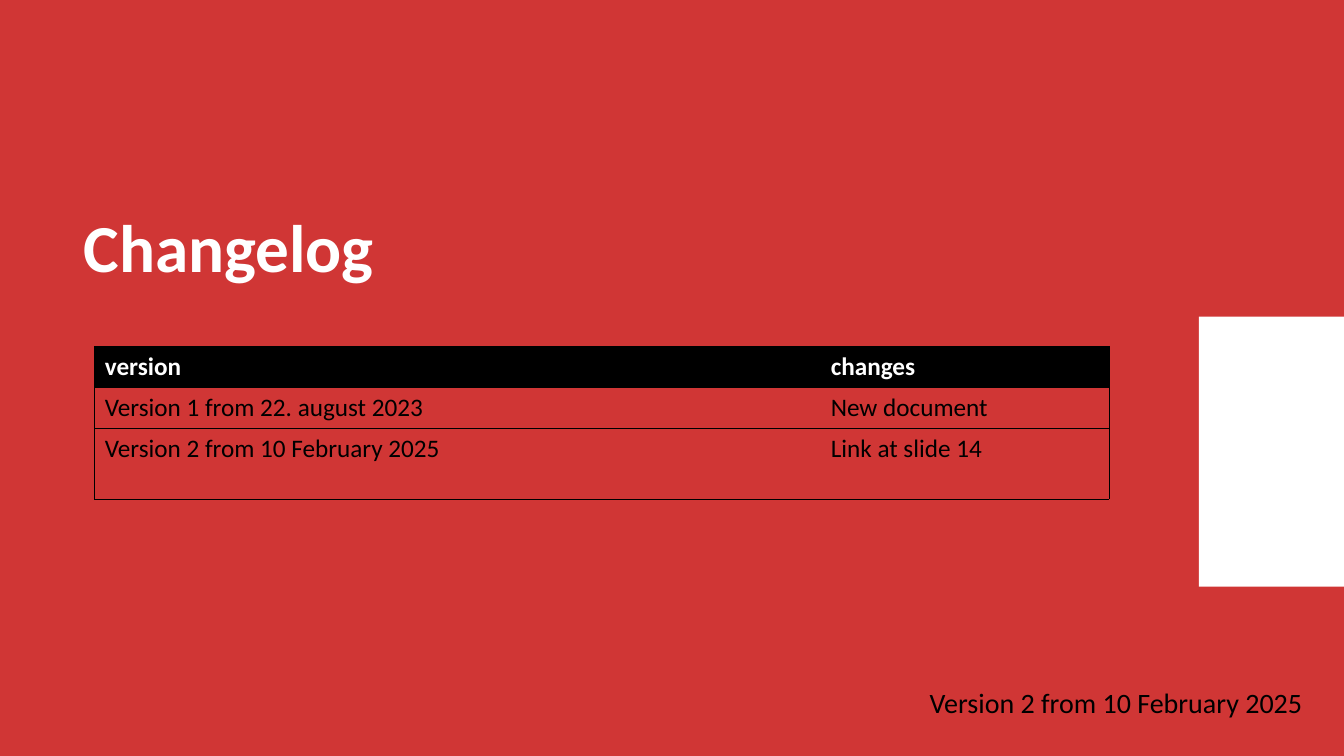
import dataclasses

import pptx
import pptx.dml.color
import pptx.enum.shapes
import pptx.enum.text
import pptx.oxml.ns
import pptx.util
from lxml import etree

Inches = pptx.util.Inches
RED, WHITE, BLACK = "D03635", "FFFFFF", "000000"


@dataclasses.dataclass
class Entry:
    version: str
    change: str
    height: float
    head: bool = False


LOG = [
    Entry("version", "changes", 0.4, head=True),
    Entry("Version 1 from 22. august 2023", "New document", 0.41),
    Entry("Version 2 from 10 February 2025", "Link at slide 14", 0.7),
]
WIDTHS = (7.2, 2.86)


def paint(fill, color: str) -> None:
    fill.solid()
    fill.fore_color.rgb = pptx.dml.color.RGBColor.from_string(color)


def style(frame, size: int, color: str, bold: bool = False) -> None:
    for run in frame.paragraphs[0].runs:
        run.font.name = "Calibri"
        run.font.size = pptx.util.Pt(size)
        run.font.bold = bold
        paint(run.font.fill, color)


def trim(frame) -> None:
    frame.margin_left = frame.margin_right = 0
    frame.margin_top = frame.margin_bottom = 0


def edge(cell, side: str, shown: bool) -> None:
    props = cell._tc.get_or_add_tcPr()
    qn = pptx.oxml.ns.qn
    line = etree.SubElement(props, qn(f"a:ln{side}"), w="6350")
    if shown:
        fill = etree.SubElement(line, qn("a:solidFill"))
        etree.SubElement(fill, qn("a:srgbClr"), val=BLACK)
    else:
        etree.SubElement(line, qn("a:noFill"))


def fill_row(table, index: int, entry: Entry) -> None:
    table.rows[index].height = Inches(entry.height)
    for col, text in enumerate((entry.version, entry.change)):
        cell = table.cell(index, col)
        cell.text_frame.text = text
        style(cell.text_frame, 18, WHITE if entry.head else BLACK, entry.head)
        # Only the inner vertical edge stays open
        for side in "LRTB":
            edge(cell, side, (side, col) not in (("R", 0), ("L", 1)))
        if entry.head:
            paint(cell.fill, BLACK)
        else:
            cell.fill.background()


def main() -> None:
    deck = pptx.Presentation()
    deck.slide_width, deck.slide_height = Inches(13.33), Inches(7.5)
    slide = deck.slides.add_slide(deck.slide_layouts[5])
    shapes = slide.shapes

    # Background and plain block at the right edge
    paint(slide.background.fill, RED)
    block = shapes.add_shape(
        pptx.enum.shapes.MSO_SHAPE.RECTANGLE,
        Inches(11.89), Inches(3.14), Inches(1.44), Inches(2.68))
    block.shadow.inherit = False
    paint(block.fill, WHITE)
    block.line.fill.background()

    # Title
    title = shapes.title
    title.left, title.top = Inches(0.83), Inches(0.68)
    title.width, title.height = Inches(7.9), Inches(2.16)
    frame = title.text_frame
    frame.text = "Changelog"
    trim(frame)
    frame.vertical_anchor = pptx.enum.text.MSO_ANCHOR.BOTTOM
    frame.paragraphs[0].alignment = pptx.enum.text.PP_ALIGN.LEFT
    frame.paragraphs[0].line_spacing = 0.88
    style(frame, 48, WHITE, True)

    # Version note
    note = shapes.add_textbox(
        Inches(9.22), Inches(6.8), Inches(3.72), Inches(0.34)).text_frame
    note.text = LOG[-1].version
    trim(note)
    note.word_wrap = False
    note.auto_size = pptx.enum.text.MSO_AUTO_SIZE.SHAPE_TO_FIT_TEXT
    style(note, 20, BLACK)

    # Change table
    table = shapes.add_table(
        len(LOG), len(WIDTHS), Inches(0.94), Inches(3.44),
        Inches(sum(WIDTHS)), Inches(sum(e.height for e in LOG))).table
    table.horz_banding = False
    for column, width in zip(table.columns, WIDTHS):
        column.width = Inches(width)
    for index, entry in enumerate(LOG):
        fill_row(table, index, entry)

    deck.save("out.pptx")


if __name__ == "__main__":
    main()
